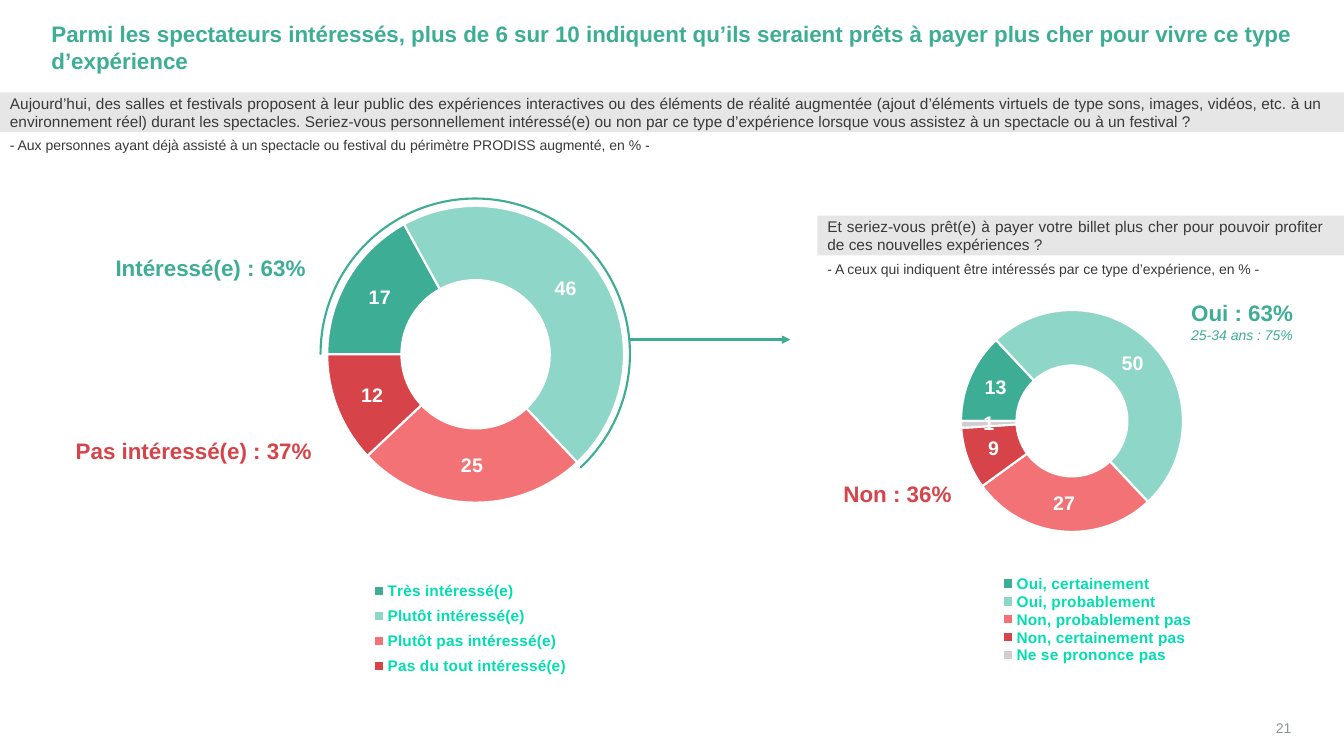
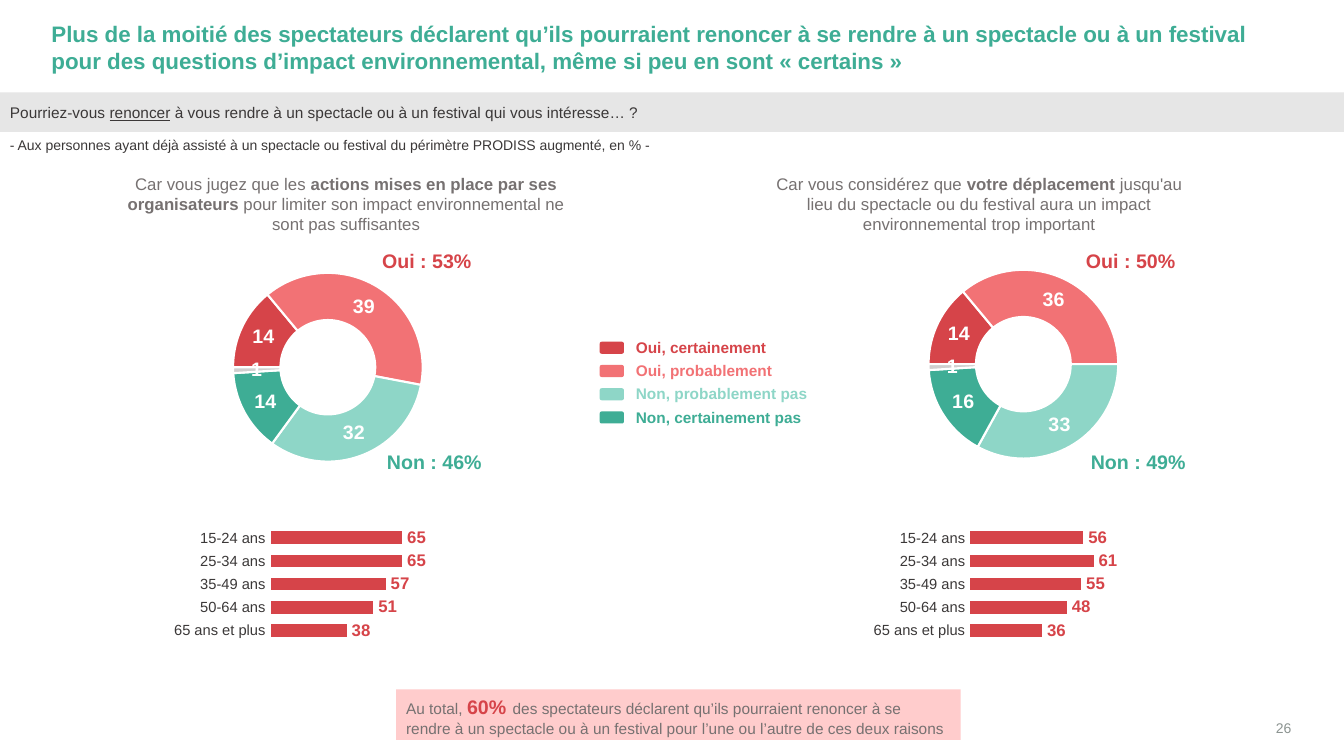
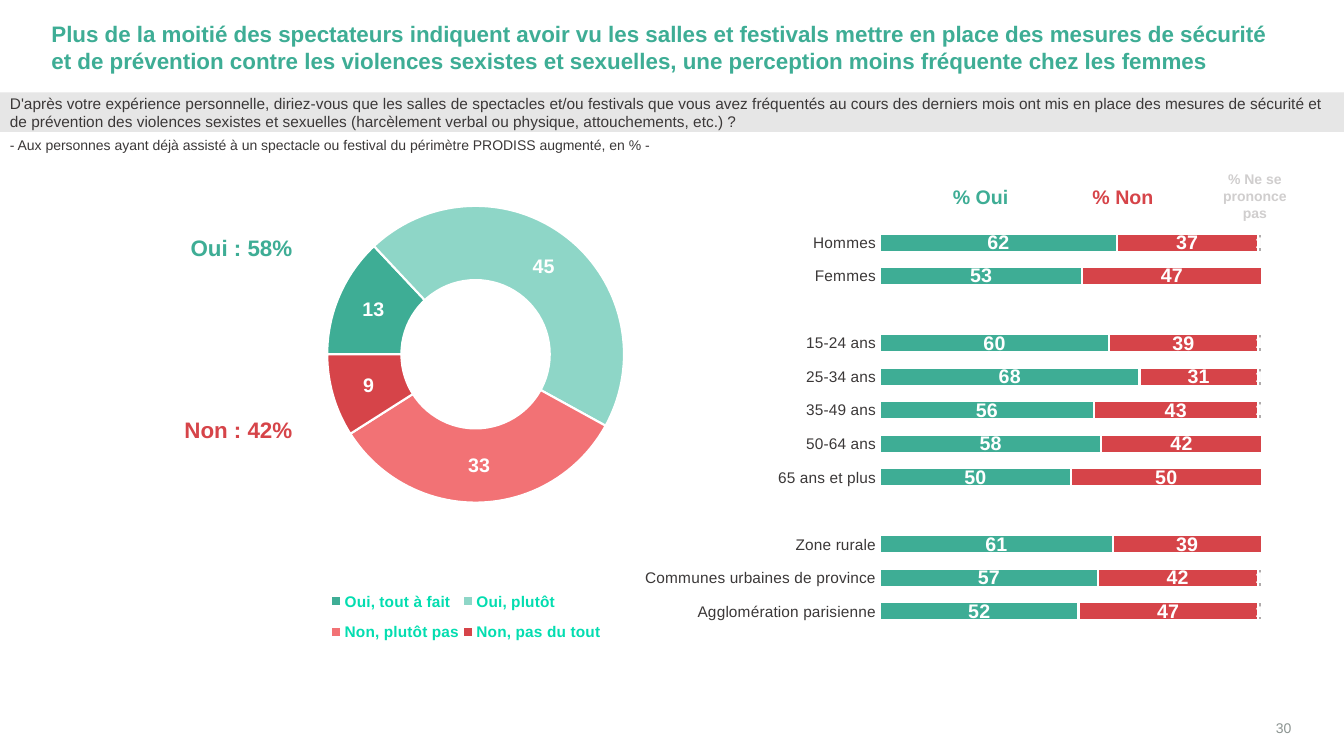
from pptx import Presentation
from pptx.chart.data import CategoryChartData
from pptx.dml.color import RGBColor
from pptx.enum.chart import XL_CHART_TYPE, XL_LABEL_POSITION, XL_LEGEND_POSITION, XL_TICK_MARK
from pptx.enum.shapes import MSO_CONNECTOR, MSO_SHAPE
from pptx.enum.text import MSO_ANCHOR, MSO_AUTO_SIZE, PP_ALIGN
from pptx.oxml import parse_xml
from pptx.oxml.ns import nsdecls, qn
from pptx.util import Pt

FONT = "Arial"
COLORS = {
    "green": "3EAD95",
    "light_green": "8ED6C7",
    "red": "D64449",
    "light_red": "F27275",
    "pale_grey": "D0CECE",
    "mid_grey": "AFABAB",
    "band": "E6E6E6",
    "ink": "3B3838",
    "text_grey": "767171",
    "page_grey": "8C9491",
    "chart_text": "014537",
    "legend": "03DDB0",
    "pink": "FFCCCC",
    "arc_fill": "70BF4A",
    "white": "FFFFFF",
}
POSITIVE_FIRST = ["green", "light_green", "light_red", "red", "pale_grey"]
NEGATIVE_FIRST = ["red", "light_red", "light_green", "green", "pale_grey"]
YES_NO_ANSWERS = [
    "Oui, certainement",
    "Oui, probablement",
    "Non, probablement pas",
    "Non, certainement pas",
    "Ne se prononce pas",
]
AGES = ["15-24 ans", "25-34 ans", "35-49 ans", "50-64 ans", "65 ans et plus"]
BASE = ("- Aux personnes ayant déjà assisté à un spectacle ou festival "
        "du périmètre PRODISS augmenté, en % -")
BIG_FRAME = (28.8, 115.2, 476.6, 389.5)
BIG_RING = (233.8, 147.1, 212, 212)


def rgb(name):
    return RGBColor.from_string(COLORS[name])


def points(box):
    return [Pt(length) for length in box]


def style_font(font, size, color, bold=False, italic=False, underline=False):
    font.name = FONT
    font.size = Pt(size)
    font.bold = bold
    font.italic = italic
    font.underline = underline
    font.color.rgb = rgb(color)


def write_text(shape, paragraphs, size, color, bold=False, align=PP_ALIGN.LEFT,
               anchor=MSO_ANCHOR.MIDDLE, margins=(7.2, 3.6, 7.2, 3.6)):
    frame = shape.text_frame
    frame.word_wrap = True
    frame.auto_size = MSO_AUTO_SIZE.NONE
    frame.vertical_anchor = anchor
    frame.margin_left, frame.margin_top, frame.margin_right, frame.margin_bottom = points(margins)
    if isinstance(paragraphs, str):
        paragraphs = [[(paragraphs, {})]]
    for index, runs in enumerate(paragraphs):
        paragraph = frame.add_paragraph() if index else frame.paragraphs[0]
        paragraph.alignment = align
        for text, changes in runs:
            run = paragraph.add_run()
            run.text = text
            style_font(run.font, **{"size": size, "color": color, "bold": bold, **changes})


def add_text(slide, box, paragraphs, size, color, **options):
    write_text(slide.shapes.add_textbox(*points(box)), paragraphs, size, color, **options)


def add_block(slide, box, fill, kind=MSO_SHAPE.RECTANGLE):
    shape = slide.shapes.add_shape(kind, *points(box))
    shape.shadow.inherit = False
    shape.fill.solid()
    shape.fill.fore_color.rgb = rgb(fill)
    shape.line.fill.background()
    return shape


def add_question(slide, box, paragraphs):
    write_text(add_block(slide, box, "band"), paragraphs, 11, "ink",
               align=PP_ALIGN.JUSTIFY, margins=(7.2, 0, 14.4, 0))


def add_base(slide, box, text):
    add_text(slide, box, text, 10, "ink", anchor=MSO_ANCHOR.TOP)


def add_page(presentation, title, number, question):
    slide = presentation.slides.add_slide(presentation.slide_layouts[5])
    placeholder = slide.shapes.title
    placeholder.left, placeholder.top, placeholder.width, placeholder.height = points(
        (36.7, 20.9, 886.3, 25.9))
    write_text(placeholder, title, 16, "green", bold=True, margins=(0, 0, 0, 0))
    add_question(slide, (0, 66, 960, 28.3), question)
    add_base(slide, (0, 94.3, 607, 21.6), BASE)
    add_text(slide, (880, 509, 42.5, 17.3), str(number), 10, "page_grey",
             align=PP_ALIGN.RIGHT, anchor=MSO_ANCHOR.BOTTOM, margins=(0, 0, 0, 0))
    return slide


def manual_layout(frame, box, target=""):
    left, top, width, height = frame
    fractions = {
        "x": (box[0] - left) / width,
        "y": (box[1] - top) / height,
        "w": box[2] / width,
        "h": box[3] / height,
    }
    values = "".join(f'<c:{key} val="{value:.4f}"/>' for key, value in fractions.items())
    return parse_xml(
        f'<c:layout {nsdecls("c")}><c:manualLayout>{target}'
        f'<c:xMode val="edge"/><c:yMode val="edge"/>{values}</c:manualLayout></c:layout>')


def add_chart(slide, kind, frame, plot_box, categories, series):
    data = CategoryChartData(number_format="##0")
    data.categories = categories
    for name, values in series:
        data.add_series(name, values)
    chart = slide.shapes.add_chart(kind, *points(frame), data).chart
    chart.has_title = False
    chart.has_legend = False
    style_font(chart.font, 10, "chart_text")
    plot_area = chart.element.xpath("c:chart/c:plotArea")[0]
    for layout in plot_area.findall(qn("c:layout")):
        plot_area.remove(layout)
    plot_area.insert(0, manual_layout(frame, plot_box, '<c:layoutTarget val="inner"/>'))
    return chart


def outline_white(item, fill):
    item.format.fill.solid()
    item.format.fill.fore_color.rgb = rgb(fill)
    item.format.line.color.rgb = rgb("white")
    item.format.line.width = Pt(1.5)


def label_values(chart, index, size, color, position=None):
    series = chart.plots[0].series[index]
    labels = series.data_labels
    labels.show_value = True
    labels.number_format = "##0"
    labels.number_format_is_linked = False
    style_font(labels.font, size, color, bold=True)
    if position is not None:
        labels.position = position
    element = chart.element.xpath("//c:ser/c:dLbls")[index]
    zeros = [point for point, value in enumerate(series.values) if value == 0]
    for place, point in enumerate(zeros):
        element.insert(place, parse_xml(
            f'<c:dLbl {nsdecls("c")}><c:idx val="{point}"/><c:delete val="1"/></c:dLbl>'))


def add_ring(slide, frame, ring_box, categories, values, colors):
    chart = add_chart(slide, XL_CHART_TYPE.DOUGHNUT, frame, ring_box, categories,
                      [("Réponses", values)])
    chart.plots[0].vary_by_categories = True
    chart.element.xpath("//c:firstSliceAng")[0].set("val", "270")
    for index, color in zip(range(len(values)), colors):
        outline_white(chart.plots[0].series[0].points[index], color)
    label_values(chart, 0, 14, "white")
    return chart


def add_legend(chart, frame, box, hidden=()):
    chart.has_legend = True
    chart.legend.position = XL_LEGEND_POSITION.LEFT
    chart.legend.include_in_layout = False
    style_font(chart.legend.font, 11, "legend", bold=True)
    legend = chart.element.xpath("//c:legend")[0]
    for layout in legend.findall(qn("c:layout")):
        legend.remove(layout)
    position = legend.find(qn("c:legendPos"))
    position.addnext(manual_layout(frame, box))
    for index in hidden:
        position.addnext(parse_xml(
            f'<c:legendEntry {nsdecls("c")}><c:idx val="{index}"/>'
            '<c:delete val="1"/></c:legendEntry>'))


def add_bars(slide, kind, frame, plot_box, categories, series, gap, axis_size):
    chart = add_chart(slide, kind, frame, plot_box, categories,
                      [(name, values) for name, values, color in series])
    plot = chart.plots[0]
    plot.vary_by_categories = False
    plot.gap_width = gap
    for item, (name, values, color) in zip(plot.series, series):
        outline_white(item, color)
    category_axis = chart.category_axis
    category_axis.reverse_order = True
    category_axis.has_major_gridlines = False
    category_axis.major_tick_mark = XL_TICK_MARK.NONE
    category_axis.format.line.fill.background()
    style_font(category_axis.tick_labels.font, axis_size, "ink")
    chart.value_axis.has_major_gridlines = False
    chart.value_axis.visible = False
    return chart


def add_arrow(slide, start, end):
    connector = slide.shapes.add_connector(MSO_CONNECTOR.STRAIGHT, *points(start + end))
    connector.line.color.rgb = rgb("green")
    connector.line.width = Pt(2)
    properties = connector.element.spPr
    properties.find(qn("a:ln")).append(
        parse_xml(f'<a:tailEnd {nsdecls("a")} type="triangle"/>'))
    properties.append(parse_xml(f'<a:effectLst {nsdecls("a")}/>'))


def add_arc(slide, box):
    arc = add_block(slide, box, "arc_fill", MSO_SHAPE.BLOCK_ARC)
    for index, value in enumerate((108, 28.19, 0)):
        arc.adjustments[index] = value
    arc.line.color.rgb = rgb("green")
    arc.line.width = Pt(1.5)


def add_total(slide, box, text, color, size=16, align=PP_ALIGN.RIGHT):
    add_text(slide, box, text, size, color, bold=True, align=align)


def build_experiences(presentation):
    slide = add_page(
        presentation,
        "Parmi les spectateurs intéressés, plus de 6 sur 10 indiquent qu’ils seraient prêts "
        "à payer plus cher pour vivre ce type d’expérience",
        21,
        "Aujourd’hui, des salles et festivals proposent à leur public des expériences "
        "interactives ou des éléments de réalité augmentée (ajout d’éléments virtuels de type "
        "sons, images, vidéos, etc. à un environnement réel) durant les spectacles. Seriez-vous "
        "personnellement intéressé(e) ou non par ce type d’expérience lorsque vous assistez à "
        "un spectacle ou à un festival ?")
    answers = ["Très intéressé(e)", "Plutôt intéressé(e)", "Plutôt pas intéressé(e)",
               "Pas du tout intéressé(e)", "Ne se prononce pas"]
    interest = add_ring(slide, BIG_FRAME, BIG_RING, answers, [17, 46, 25, 12, 0], POSITIVE_FIRST)
    add_legend(interest, BIG_FRAME, (261, 410.5, 150, 77), hidden=[4])
    add_total(slide, (56.9, 177, 168.5, 28), "Intéressé(e) : 63%", "green")
    add_total(slide, (36.7, 307.5, 193, 28), "Pas intéressé(e) : 37%", "red")
    add_arrow(slide, (450, 242.6), (564.5, 242.6))
    add_arc(slide, (229, 141.8, 221, 221.8))

    price_frame = (537.1, 190.8, 356.4, 294.5)
    price = add_ring(slide, price_frame, (686.5, 221.5, 158.5, 158.5), YES_NO_ANSWERS,
                     [13, 50, 27, 9, 1], POSITIVE_FIRST)
    add_legend(price, price_frame, (709, 410.5, 150, 64))
    add_text(slide, (843.8, 215.3, 115, 28),
             [[("Oui : 63%", {})],
              [("25-34 ans : 75%", {"size": 10, "bold": False, "italic": True})]],
             16, "green", bold=True)
    add_total(slide, (545, 338.4, 141.8, 28), "Non : 36%", "red")
    add_question(slide, (583.9, 154.1, 376.1, 28.3),
                 "Et seriez-vous prêt(e) à payer votre billet plus cher pour pouvoir profiter "
                 "de ces nouvelles expériences ?")
    add_base(slide, (583.9, 182.9, 376.1, 19.4),
             "- A ceux qui indiquent être intéressés par ce type d’expérience, en % -")


def add_reason(slide, text_box, reason, ring_left, ring_top, values, totals, totals_left,
               bars_left, age_values):
    add_text(slide, text_box, [reason], 12, "text_grey", align=PP_ALIGN.CENTER,
             anchor=MSO_ANCHOR.TOP)
    add_ring(slide, (ring_left, ring_top, 295.9, 147.6),
             (ring_left + 75.1, ring_top + 12.1, 135.5, 135.5),
             YES_NO_ANSWERS, values, NEGATIVE_FIRST)
    yes, no = totals
    add_total(slide, (totals_left, 172.1, 141.8, 28), yes, "red", 14, PP_ALIGN.CENTER)
    add_total(slide, (totals_left + 5.4, 316.1, 141.8, 28), no, "green", 14, PP_ALIGN.CENTER)
    chart = add_bars(slide, XL_CHART_TYPE.BAR_CLUSTERED, (bars_left, 373.7, 256.3, 87.1),
                     (bars_left + 103.3, 375.9, 146.9, 82.7), AGES,
                     [("Oui", age_values, "red")], 57, 10.5)
    chart.value_axis.minimum_scale = 0
    chart.value_axis.maximum_scale = 100
    label_values(chart, 0, 12, "red", XL_LABEL_POSITION.OUTSIDE_END)


def build_environment(presentation):
    slide = add_page(
        presentation,
        "Plus de la moitié des spectateurs déclarent qu’ils pourraient renoncer à se rendre à un "
        "spectacle ou à un festival pour des questions d’impact environnemental, même si peu en "
        "sont « certains »",
        26,
        [[("Pourriez-vous ", {}), ("renoncer", {"underline": True}),
          (" à vous rendre à un spectacle ou à un festival qui vous intéresse… ?", {})]])
    add_reason(
        slide, (80.6, 120.2, 333.4, 51.1),
        [("Car vous jugez que les ", {}),
         ("actions mises en place par ses organisateurs ", {"bold": True}),
         ("pour limiter son impact environnemental ne sont pas suffisantes", {})],
        91.4, 182.9, [14, 39, 32, 14, 1], ("Oui : 53%", "Non : 46%"), 234,
        89.3, [65, 65, 57, 51, 38])
    add_reason(
        slide, (537.8, 120.2, 323.3, 51.1),
        [("Car vous considérez que ", {}), ("votre déplacement ", {"bold": True}),
         ("jusqu'au lieu du spectacle ou du festival aura un impact environnemental "
          "trop important", {})],
        588.2, 180.7, [14, 36, 33, 16, 1], ("Oui : 50%", "Non : 49%"), 736.8,
        589, [56, 61, 55, 48, 36])
    for index, (answer, color) in enumerate(zip(YES_NO_ANSWERS[:4], NEGATIVE_FIRST)):
        top = 239 + index * 16.6
        add_block(slide, (428.4, top + 5.1, 17.3, 8.6), color, MSO_SHAPE.ROUNDED_RECTANGLE)
        add_text(slide, (447.1, top, 160, 18), answer, 11, color, bold=True,
                 margins=(7.2, 0, 14.4, 0))
    write_text(
        add_block(slide, (283, 492.5, 403.2, 36), "pink"),
        [[("Au total, ", {}), ("60%", {"size": 14, "color": "red", "bold": True}),
          (" ", {"size": 16, "bold": True}),
          ("des spectateurs déclarent qu’ils pourraient renoncer à se rendre à un spectacle ou "
           "à un festival pour l’une ou l’autre de ces deux raisons", {})]],
        11, "text_grey")


def build_safety(presentation):
    slide = add_page(
        presentation,
        "Plus de la moitié des spectateurs indiquent avoir vu les salles et festivals mettre en "
        "place des mesures de sécurité et de prévention contre les violences sexistes et "
        "sexuelles, une perception moins fréquente chez les femmes",
        30,
        "D'après votre expérience personnelle, diriez-vous que les salles de spectacles et/ou "
        "festivals que vous avez fréquentés au cours des derniers mois ont mis en place des "
        "mesures de sécurité et de prévention des violences sexistes et sexuelles (harcèlement "
        "verbal ou physique, attouchements, etc.) ?")
    answers = ["Oui, tout à fait", "Oui, plutôt", "Non, plutôt pas", "Non, pas du tout"]
    measures = add_ring(slide, BIG_FRAME, BIG_RING, answers, [13, 45, 33, 9], POSITIVE_FIRST)
    add_legend(measures, BIG_FRAME, (234, 414, 198, 53))
    add_total(slide, (74.2, 162.7, 141.8, 28), "Oui : 58%", "green")
    add_total(slide, (74.2, 293, 141.8, 28), "Non : 42%", "red")

    groups = ["Hommes", "Femmes", "", *AGES, "", "Zone rurale",
              "Communes urbaines de province", "Agglomération parisienne"]
    series = [
        ("Oui", [62, 53, None, 60, 68, 56, 58, 50, None, 61, 57, 52], "green"),
        ("Non", [37, 47, None, 39, 31, 43, 42, 50, None, 39, 42, 47], "red"),
        ("Ne se prononce pas", [1, 0, None, 1, 1, 1, 0, 0, None, 0, 1, 1], "mid_grey"),
    ]
    chart = add_bars(slide, XL_CHART_TYPE.BAR_STACKED_100, (447.1, 151.2, 476.6, 327.6),
                     (628.7, 161.4, 272.6, 287.3), groups, series, 85, 11)
    chart.plots[0].overlap = 100
    for index, size in enumerate((14, 14, 11)):
        label_values(chart, index, size, "white", XL_LABEL_POSITION.CENTER)
    headings = [
        ((635, 132.5, 131, 15.8), "% Oui", "green", 14),
        ((736.6, 132.5, 131, 15.8), "% Non", "red", 14),
        ((865.4, 126, 61.9, 28), "% Ne se prononce pas", "pale_grey", 10),
    ]
    for box, text, color, size in headings:
        add_total(slide, box, text, color, size, PP_ALIGN.CENTER)


def main():
    presentation = Presentation()
    presentation.slide_width = Pt(960)
    presentation.slide_height = Pt(540)
    build_experiences(presentation)
    build_environment(presentation)
    build_safety(presentation)
    presentation.save("out.pptx")


if __name__ == "__main__":
    main()
